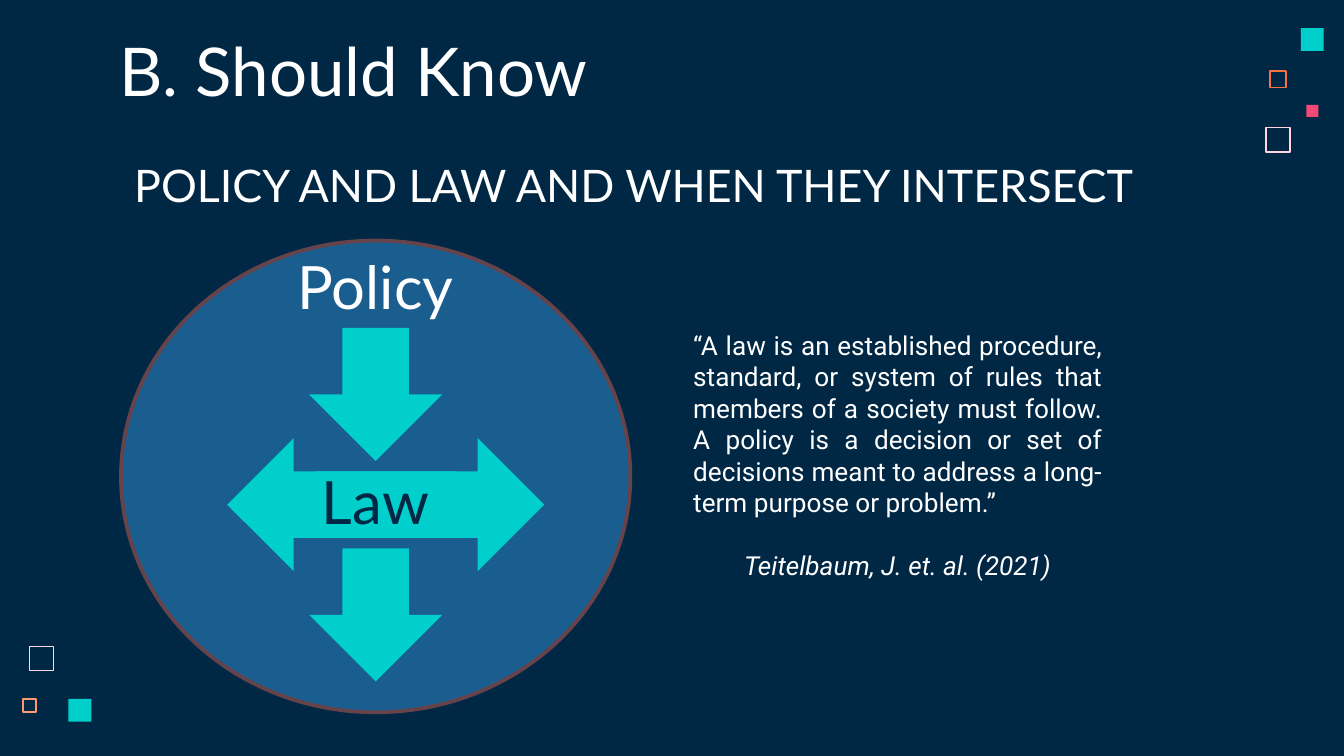
from dataclasses import dataclass

from pptx import Presentation
from pptx.dml.color import RGBColor
from pptx.enum.shapes import MSO_SHAPE
from pptx.enum.text import MSO_ANCHOR, PP_ALIGN
from pptx.util import Inches, Pt


@dataclass(frozen=True)
class Theme:
    navy: str = "002845"
    blue: str = "1A5E8F"
    brown: str = "66434B"
    teal: str = "00CFCC"
    pink: str = "F64975"
    blush: str = "FFD6E1"
    orange: str = "FC723F"
    peach: str = "FF9973"
    white: str = "FFFFFF"
    heading_font: str = "Lato"
    body_font: str = "Roboto"
    title: int = 36
    label: int = 32
    subtitle: int = 24
    body: int = 14


THEME = Theme()


def rgb(value):
    return RGBColor.from_string(value)


def add_shape(slide, kind, box, fill=None, line=None, width=1, rotation=0):
    s = slide.shapes.add_shape(kind, *map(Inches, box))
    s.shadow.inherit = False
    s.rotation = rotation
    if fill:
        s.fill.solid()
        s.fill.fore_color.rgb = rgb(fill)
    else:
        s.fill.background()
    if line:
        s.line.color.rgb = rgb(line)
        s.line.width = Pt(width)
    else:
        s.line.fill.background()
    return s


def add_text(slide, box, anchor=MSO_ANCHOR.MIDDLE, inset=0.1):
    tf = slide.shapes.add_textbox(*map(Inches, box)).text_frame
    tf.word_wrap = True
    tf.vertical_anchor = anchor
    tf.margin_left = tf.margin_right = Inches(0.1)
    tf.margin_top = tf.margin_bottom = Inches(inset)
    return tf


def add_run(p, text, size, font, color=THEME.white, italic=None):
    r = p.add_run()
    r.text = text
    r.font.size = Pt(size)
    r.font.name = font
    r.font.italic = italic
    r.font.color.rgb = rgb(color)


def draw_squares(slide, left, top, squares):
    for dx, dy, size, color, solid in squares:
        if solid:
            box = (left + dx, top + dy, size, size)
            add_shape(slide, MSO_SHAPE.RECTANGLE, box, fill=color)
        else:
            box = (left + dx, top + dy, size, size)
            add_shape(slide, MSO_SHAPE.RECTANGLE, box, line=color, width=0.8)


def draw_heading(slide, left, top, width):
    tf = add_text(slide, (left, top, width, 0.63), MSO_ANCHOR.TOP)
    add_run(tf.paragraphs[0], "B. Should Know", THEME.title, THEME.heading_font)
    tf = add_text(slide, (left + 0.11, top + 0.99, width - 0.12, 0.53))
    add_run(tf.paragraphs[0], "POLICY AND LAW AND WHEN THEY INTERSECT",
            THEME.subtitle, THEME.heading_font)


def draw_policy_circle(slide, left, top, width, height):
    add_shape(slide, MSO_SHAPE.OVAL, (left, top, width, height),
              THEME.blue, THEME.brown, 2)
    arrow = 0.99
    center = left + width / 2
    arrows = [
        (left + 1.45, top + 1.47, 1.7, 0),
        (left + 0.79, top + 1.47, 1.7, 180),
        (center - arrow / 2, top + 0.65, arrow, 90),
        (center - arrow / 2, top + 2.29, arrow, 90),
    ]
    for x, y, length, rotation in arrows:
        add_shape(slide, MSO_SHAPE.RIGHT_ARROW, (x, y, length, arrow),
                  THEME.teal, rotation=rotation)

    tf = add_text(slide, (center - 2.5, top + 0.02, 5, 2.26),
                  MSO_ANCHOR.TOP, 0.05)
    policy, law = tf.paragraphs[0], tf.add_paragraph()
    policy.alignment = law.alignment = PP_ALIGN.CENTER
    law.space_before = Pt(76.8)
    add_run(policy, "Policy", THEME.label, THEME.heading_font)
    add_run(law, "Law", THEME.label, THEME.heading_font, THEME.navy)


def draw_quote(slide, left, top, width, height):
    tf = add_text(slide, (left, top, width, height))
    quote, source = tf.paragraphs[0], tf.add_paragraph()
    quote.alignment = PP_ALIGN.JUSTIFY
    source.alignment = PP_ALIGN.CENTER
    source.space_before = Pt(16.8)
    add_run(quote, "“A law is an established procedure, standard, or system of "
            "rules that members of a society must follow. A policy is a decision "
            "or set of decisions meant to address a long-term purpose or problem.”",
            THEME.body, THEME.body_font)
    add_run(source, "Teitelbaum, J. et. al. (2021)", THEME.body,
            THEME.body_font, italic=True)


def main():
    prs = Presentation()
    prs.slide_width = Inches(10)
    prs.slide_height = prs.slide_width * 9 // 16
    slide = prs.slides.add_slide(prs.slide_layouts[6])
    slide.background.fill.solid()
    slide.background.fill.fore_color.rgb = rgb(THEME.navy)

    draw_squares(slide, 9.42, 0.21, [
        (0, 0.74, 0.18, THEME.blush, False),
        (0.03, 0.32, 0.12, THEME.orange, False),
        (0.26, 0, 0.17, THEME.teal, True),
        (0.3, 0.57, 0.09, THEME.pink, True),
    ])
    draw_squares(slide, 0.17, 4.81, [
        (0, 0.39, 0.1, THEME.peach, False),
        (0.05, 0, 0.18, THEME.blush, False),
        (0.34, 0.39, 0.17, THEME.teal, True),
    ])
    draw_quote(slide, 5.06, 3.12, 3.24, 0.53)
    draw_heading(slide, 0.79, 0.12, 8.43)
    draw_policy_circle(slide, 0.9, 1.79, 3.79, 3.51)
    prs.save("out.pptx")


if __name__ == "__main__":
    main()
